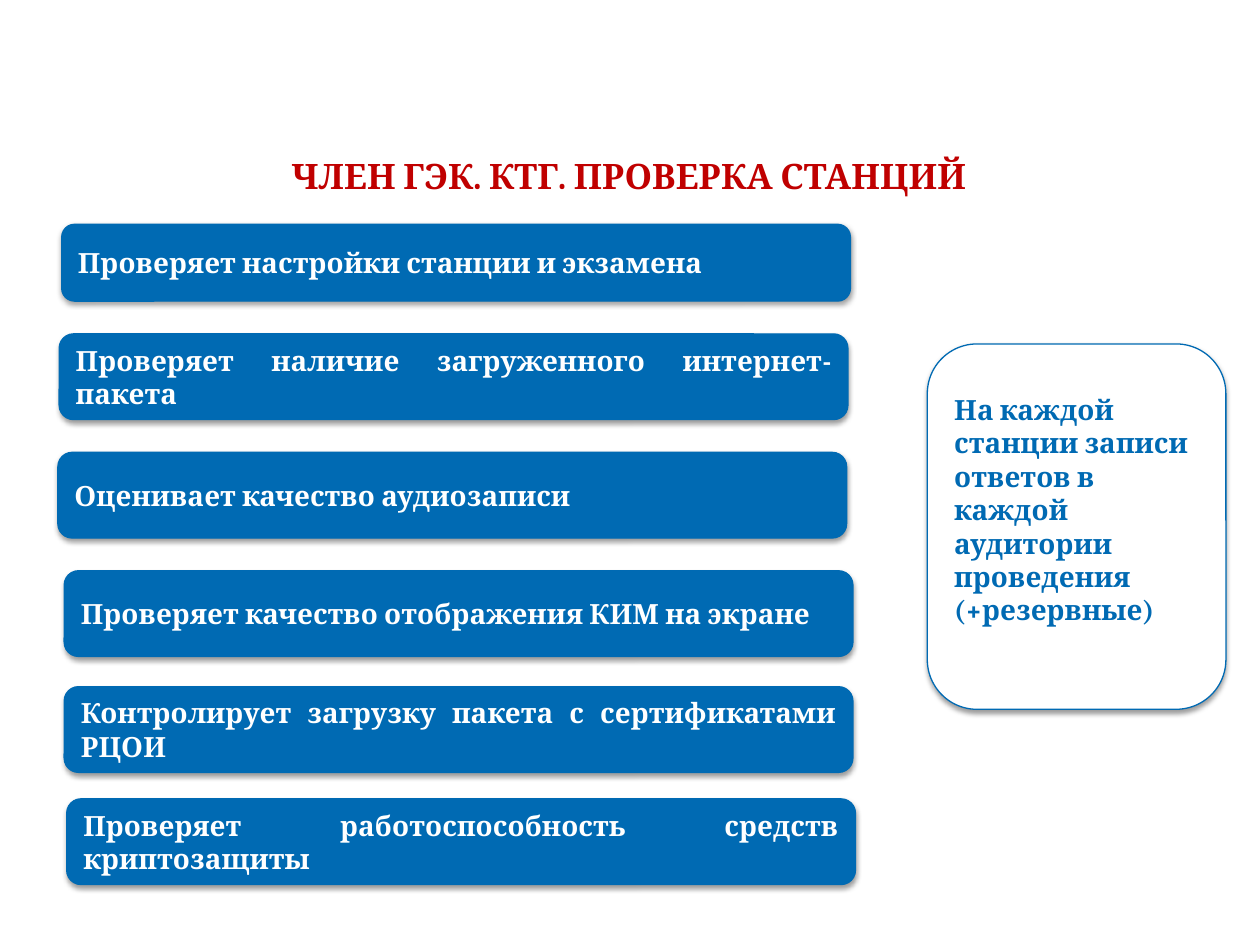
from lxml.etree import SubElement
from pptx import Presentation
from pptx.dml.color import RGBColor
from pptx.enum.shapes import MSO_SHAPE
from pptx.enum.text import MSO_ANCHOR, MSO_AUTO_SIZE, PP_ALIGN
from pptx.oxml.ns import qn
from pptx.util import Inches, Pt

COLORS = {"blue": "006AB3", "white": "FFFFFF", "red": "C00000", "black": "000000"}


def write(shape, text, size=15.9, color="white", align=PP_ALIGN.LEFT):
    frame = shape.text_frame
    frame.word_wrap = True
    frame.auto_size = MSO_AUTO_SIZE.NONE
    frame.vertical_anchor = MSO_ANCHOR.MIDDLE
    par = frame.paragraphs[0]
    par.alignment = align
    run = par.add_run()
    run.text = text
    run.font.name = "Cambria"
    run.font.size = Pt(size)
    run.font.bold = True
    run.font.color.rgb = RGBColor.from_string(COLORS[color])


def add_box(left, top, width, height, fill):
    box = slide.shapes.add_shape(
        MSO_SHAPE.ROUNDED_RECTANGLE,
        Inches(left), Inches(top), Inches(width), Inches(height))
    box.fill.solid()
    box.fill.fore_color.rgb = RGBColor.from_string(COLORS[fill])
    box.line.color.rgb = RGBColor.from_string(COLORS["blue"])
    box.line.width = Pt(0.75)
    # Soft shadow straight down
    box.shadow.inherit = False
    effects = box._element.spPr.find(qn("a:effectLst"))
    shade = SubElement(effects, qn("a:outerShdw"), blurRad=str(Pt(3.1)),
                       dist=str(Pt(1.6)), dir="5400000", rotWithShape="0")
    tint = SubElement(shade, qn("a:srgbClr"), val=COLORS["black"])
    SubElement(tint, qn("a:alpha"), val="38000")
    return box


deck = Presentation()
deck.slide_width, deck.slide_height = Inches(10), Inches(7.5)
slide = deck.slides.add_slide(deck.slide_layouts[5])

# Title
title = slide.shapes.title
title.left, title.top = Inches(0.49), Inches(1.06)
title.width, title.height = Inches(9), Inches(0.66)
write(title, "ЧЛЕН ГЭК. КТГ. ПРОВЕРКА СТАНЦИЙ", size=20, color="red",
      align=PP_ALIGN.CENTER)

# Checks: left, top, height, alignment, text
left, just = PP_ALIGN.LEFT, PP_ALIGN.JUSTIFY
checks = [
    (0.49, 1.78, 0.61, left, "Проверяет настройки станции и экзамена"),
    (0.47, 2.65, 0.68, just, "Проверяет наличие загруженного интернет-пакета"),
    (0.46, 3.59, 0.68, just, "Оценивает качество аудиозаписи"),
    (0.51, 4.53, 0.68, just, "Проверяет качество отображения КИМ на экране"),
    (0.51, 5.45, 0.68, just, "Контролирует загрузку пакета с сертификатами РЦОИ"),
    (0.53, 6.34, 0.68, just, "Проверяет работоспособность средств криптозащиты"),
]
for x, y, height, align, text in checks:
    write(add_box(x, y, 6.26, height, "blue"), text, align=align)

# Side note, with its text raised by a deeper bottom margin
note = add_box(7.36, 2.73, 2.37, 2.9, "white")
note.text_frame.margin_bottom = Inches(0.32)
write(note, "На каждой станции записи ответов в каждой аудитории проведения "
      "(+резервные)", color="blue")

deck.save("out.pptx")
